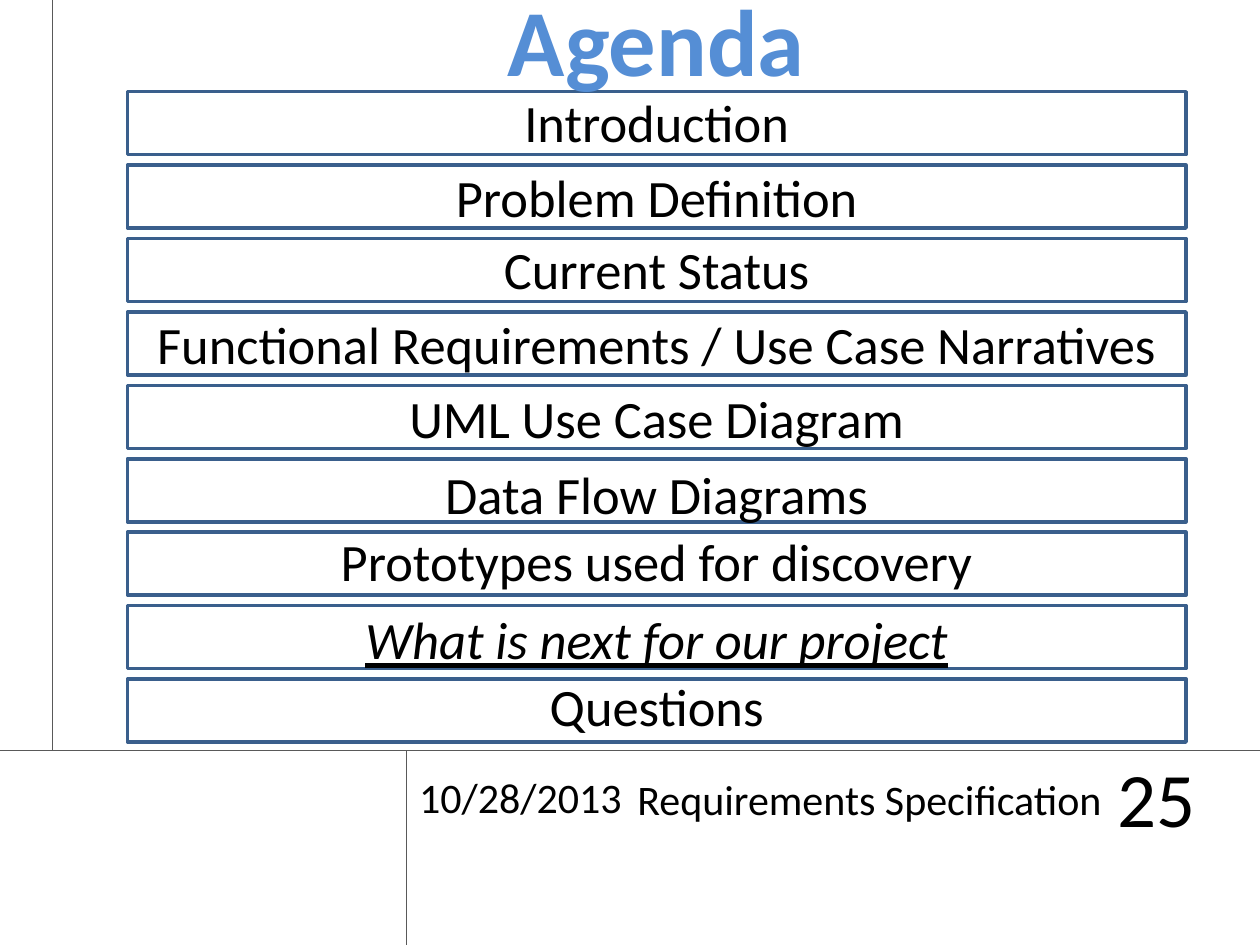
"""Build the agenda slide with nine boxed topics and a ruled footer."""
from pptx import Presentation
from pptx.dml.color import RGBColor
from pptx.enum.shapes import MSO_CONNECTOR as Link, MSO_SHAPE as Form
from pptx.enum.text import MSO_ANCHOR as Anchor, PP_ALIGN as Align
from pptx.util import Cm, Pt
from lxml.etree import SubElement
from pptx.oxml.ns import qn

BLACK = RGBColor(0x00, 0x00, 0x00)
WHITE = RGBColor(0xFF, 0xFF, 0xFF)
GREY = RGBColor(0x59, 0x59, 0x59)
NAVY = RGBColor(0x3A, 0x5F, 0x8C)
BLUE = RGBColor(0x55, 0x8E, 0xD5)

deck = Presentation()
deck.slide_width, deck.slide_height = Cm(25.4), Cm(19.05)
slide = deck.slides.add_slide(deck.slide_layouts[6])
shapes = slide.shapes


def write(text, left, top, width, height, size, align=Align.CENTER, anchor=Anchor.TOP, color=BLACK):
    box = shapes.add_textbox(Cm(left), Cm(top), Cm(width), Cm(height))
    frame = box.text_frame
    frame.word_wrap = True
    frame.vertical_anchor = anchor
    para = frame.paragraphs[0]
    para.alignment = align
    run = para.add_run()
    run.text = text
    run.font.name = "Calibri"
    run.font.size = Pt(size)
    run.font.color.rgb = color
    return run.font


RULES = [
    (25.4, 15.13, 0, 15.13),
    (1.06, 15.13, 1.06, 0),
    (8.2, 19.05, 8.2, 15.13),
]
for ends in RULES:
    rule = shapes.add_connector(Link.STRAIGHT, *[Cm(end) for end in ends])
    rule.line.color.rgb = GREY
    rule.line.width = Pt(0.75)
    SubElement(rule.element.spPr, qn("a:effectLst"))

write("10/28/2013", 8.2, 15.13, 4.8, 1.88, 24, Align.LEFT, Anchor.MIDDLE)
write("Requirements Specification", 12.6, 15.47, 11.46, 1.27, 24, Align.LEFT)
write("25", 21.29, 15.12, 3.07, 1.88, 44, Align.RIGHT, Anchor.MIDDLE)

LEFT, WIDTH = 2.57, 21.34
FIRST, PITCH = 1.85, 1.48
TOPICS = [
    ("Introduction", 1.7),
    ("Problem Definition", 3.2),
    ("Current Status", 4.65),
    ("Functional Requirements / Use Case Narratives", 6.17),
    ("UML Use Case Diagram", 7.65),
    ("Data Flow Diagrams", 9.19),
    ("Prototypes used for discovery", 10.54),
    ("What is next for our project", 12.12),
    ("Questions", 13.46),
]
CURRENT = "What is next for our project"

for row in range(len(TOPICS)):
    bar = shapes.add_shape(Form.RECTANGLE, Cm(LEFT), Cm(FIRST + row * PITCH), Cm(WIDTH), Cm(1.27))
    bar.shadow.inherit = False
    bar.fill.solid()
    bar.fill.fore_color.rgb = WHITE
    bar.line.color.rgb = NAVY
    bar.line.width = Pt(2)

for topic, top in TOPICS:
    font = write(topic, LEFT, top, WIDTH, 1.55, 30)
    if topic == CURRENT:
        font.italic = True
        font.underline = True

title = write("Agenda", 1.06, -0.48, 24.34, 2.57, 54, color=BLUE)
title.bold = True

deck.save("out.pptx")
